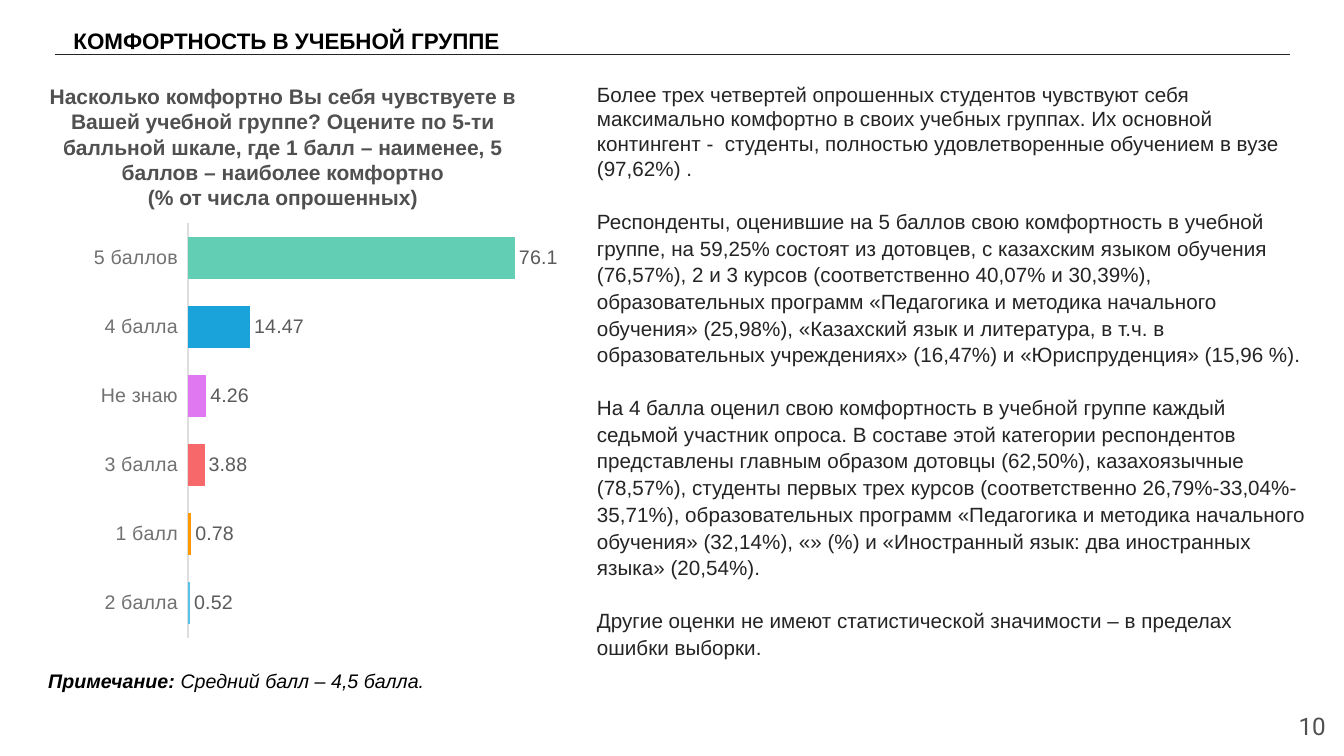
from lxml.etree import SubElement
from pptx import Presentation
from pptx.chart.data import CategoryChartData
from pptx.dml.color import RGBColor
from pptx.enum.chart import XL_CHART_TYPE, XL_LABEL_POSITION, XL_TICK_LABEL_POSITION, XL_TICK_MARK
from pptx.enum.shapes import MSO_CONNECTOR
from pptx.enum.text import PP_ALIGN
from pptx.oxml import parse_xml
from pptx.oxml.ns import nsdecls, qn
from pptx.util import Inches, Pt

BLACK = RGBColor(0x00, 0x00, 0x00)
INK = RGBColor(0x24, 0x24, 0x24)
GRAY = RGBColor(0x50, 0x50, 0x50)
LABEL = RGBColor(0x5B, 0x5B, 0x5B)
CATEGORY = RGBColor(0x71, 0x71, 0x71)
AXIS = RGBColor(0xDE, 0xDE, 0xDE)
MINT = RGBColor(0x62, 0xCF, 0xB5)
SKY = RGBColor(0x57, 0xC2, 0xEC)
ORANGE = RGBColor(0xFF, 0x99, 0x00)
CORAL = RGBColor(0xF7, 0x68, 0x6B)
VIOLET = RGBColor(0xE0, 0x78, 0xF1)
BLUE = RGBColor(0x19, 0xA3, 0xDA)

TITLE = "КОМФОРТНОСТЬ В УЧЕБНОЙ ГРУППЕ"
QUESTION = [
    "Насколько комфортно Вы себя чувствуете в Вашей учебной группе? Оцените по 5-ти "
    "балльной шкале, где 1 балл – наименее, 5 баллов – наиболее комфортно",
    "(% от числа опрошенных)",
]
SCORES = [
    ("2 балла", 0.52, SKY),
    ("1 балл", 0.78, ORANGE),
    ("3 балла", 3.88, CORAL),
    ("Не знаю", 4.26, VIOLET),
    ("4 балла", 14.47, BLUE),
    ("5 баллов", 76.1, MINT),
]
FINDINGS = [
    "Более трех четвертей опрошенных студентов чувствуют себя максимально комфортно в своих "
    "учебных группах. Их основной контингент -  студенты, полностью удовлетворенные обучением "
    "в вузе (97,62%) .",
    "Респонденты, оценившие на 5 баллов свою комфортность в учебной группе, на 59,25% состоят "
    "из дотовцев, с казахским языком обучения (76,57%), 2 и 3 курсов (соответственно 40,07% и "
    "30,39%), образовательных программ «Педагогика и методика начального обучения» (25,98%), "
    "«Казахский язык и литература, в т.ч. в образовательных учреждениях» (16,47%) и "
    "«Юриспруденция» (15,96 %).",
    "На 4 балла оценил свою комфортность в учебной группе каждый седьмой участник опроса. "
    "В составе этой категории респондентов представлены главным образом дотовцы (62,50%), "
    "казахоязычные (78,57%), студенты первых трех курсов (соответственно "
    "26,79%-33,04%-35,71%), образовательных программ «Педагогика и методика начального "
    "обучения» (32,14%), «» (%) и «Иностранный язык: два иностранных языка» (20,54%).",
    "Другие оценки не имеют статистической значимости – в пределах ошибки выборки.",
]
NOTE = ("Примечание: ", "Средний балл – 4,5 балла.")
PAGE = "10"
PLOT = {"x": 0.27, "y": 0, "w": 0.67, "h": 0.94}


def set_font(font, size, color, name="Arial", bold=None):
    font.size, font.name, font.bold = Pt(size), name, bold
    font.color.rgb = color


def add_text(s, box, texts, size, color, name="Arial", bold=None, align=PP_ALIGN.LEFT, inset=0.13):
    tf = s.shapes.add_textbox(*map(Inches, box)).text_frame
    tf.word_wrap = True
    tf.margin_left = tf.margin_right = tf.margin_top = tf.margin_bottom = Inches(inset)
    for i, text in enumerate(texts):
        p = tf.add_paragraph() if i else tf.paragraphs[0]
        p.text, p.alignment = text, align
        set_font(p.font, size, color, name, bold)
    return tf


def add_findings(s):
    tf = add_text(s, (5.79, 0.68, 7.29, 6.06), FINDINGS, 14.7, INK)
    for p in tf.paragraphs[1:]:
        p.line_spacing, p.space_before = 1.08, Pt(18.8)


def add_note(s):
    tf = add_text(s, (0.38, 6.59, 4.97, 0.34), [""], 14, BLACK, inset=0.05)
    tf.margin_left = Inches(0.1)
    p = tf.paragraphs[0]
    p.font.italic = True
    for text, bold in zip(NOTE, (True, False)):
        r = p.add_run()
        r.text, r.font.bold = text, bold


def add_scores(s):
    data = CategoryChartData()
    data.categories = [name for name, _, _ in SCORES]
    data.add_series("Series 1", [value for _, value, _ in SCORES])
    box = map(Inches, (0.49, 2.21, 5.09, 4.38))
    chart = s.shapes.add_chart(XL_CHART_TYPE.BAR_CLUSTERED, *box, data).chart
    chart.has_legend = chart.has_title = False
    set_font(chart.font, 10, INK)

    cat = chart.category_axis
    cat.major_tick_mark = cat.minor_tick_mark = XL_TICK_MARK.NONE
    cat.tick_label_position = XL_TICK_LABEL_POSITION.LOW
    cat.has_major_gridlines = False
    cat.format.line.color.rgb, cat.format.line.width = AXIS, Pt(0.75)
    set_font(cat.tick_labels.font, 14, CATEGORY)
    val = chart.value_axis
    val.minimum_scale, val.maximum_scale = 0, 80
    val.has_major_gridlines = val.visible = False

    plot = chart.plots[0]
    plot.gap_width, plot.vary_by_categories = 66, False
    series = plot.series[0]
    series.format.fill.solid()
    series.format.fill.fore_color.rgb = MINT
    for i, (_, _, color) in enumerate(SCORES):
        fill = series.points[i].format.fill
        fill.solid()
        fill.fore_color.rgb = color
    labels = series.data_labels
    labels.show_value, labels.position = True, XL_LABEL_POSITION.OUTSIDE_END
    set_font(labels.font, 14, LABEL)

    area = plot._element.getparent()
    for old in area.findall(qn("c:layout")):
        area.remove(old)
    modes = '<c:layoutTarget val="inner"/><c:xMode val="edge"/><c:yMode val="edge"/>'
    sizes = "".join(f'<c:{key} val="{share}"/>' for key, share in PLOT.items())
    area.insert(0, parse_xml(f'<c:layout {nsdecls("c")}><c:manualLayout>{modes}{sizes}'
                             '</c:manualLayout></c:layout>'))


def main():
    """Build the slide on comfort in the study group."""
    prs = Presentation()
    prs.slide_width, prs.slide_height = Inches(13.33), Inches(7.5)
    s = prs.slides.add_slide(prs.slide_layouts[6])
    rule = s.shapes.add_connector(MSO_CONNECTOR.STRAIGHT, *map(Inches, (0.55, 0.54, 12.79, 0.54)))
    rule.line.color.rgb, rule.line.width = INK, Pt(0.75)
    SubElement(rule._element.spPr, qn("a:effectLst"))
    add_text(s, (12.48, 6.93, 0.8, 0.57), [PAGE], 17.3, GRAY, "Roboto", align=PP_ALIGN.RIGHT)
    add_findings(s)
    add_scores(s)
    add_text(s, (0.26, 0.7, 5.09, 1.53), QUESTION, 15, GRAY, bold=True, align=PP_ALIGN.CENTER)
    add_note(s)
    title = add_text(s, (0.63, 0.22, 5.09, 0.37), [TITLE], 16, BLACK, bold=True, inset=0.05)
    title.margin_left = Inches(0.1)
    prs.save("out.pptx")


if __name__ == "__main__":
    main()
